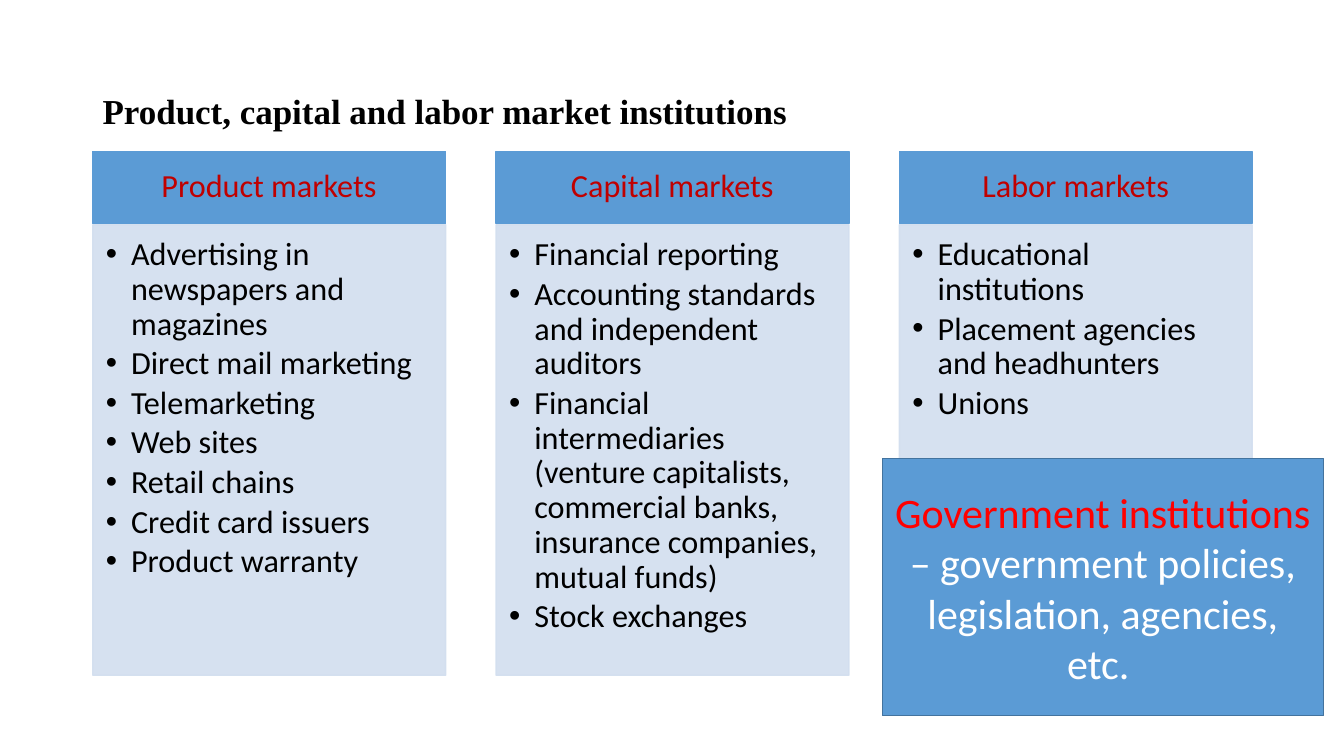
"""Build a slide of three market columns with a government callout."""
from lxml.etree import SubElement
from pptx import Presentation
from pptx.dml.color import RGBColor
from pptx.enum.shapes import MSO_SHAPE as SHAPE
from pptx.enum.text import MSO_ANCHOR as ANCHOR, PP_ALIGN as ALIGN
from pptx.oxml.ns import qn
from pptx.util import Inches, Pt

LEFT, PITCH, COL_W = 0.92, 4, 3.5
HEAD_TOP, HEAD_H = 1.5, 0.72
BODY_TOP, BODY_H = 2.23, 4.47
BLUE, PALE, DARK_BLUE = "5B9BD5", "D2DEEF", "43739E"
BLACK, WHITE, RED, DARK_RED = "000000", "FFFFFF", "FF0000", "C00000"

MARKETS = {
    "Product markets": [
        "Advertising in newspapers and magazines", "Direct mail marketing",
        "Telemarketing", "Web sites", "Retail chains",
        "Credit card issuers", "Product warranty"],
    "Capital markets": [
        "Financial reporting",
        "Accounting standards and independent auditors",
        "Financial intermediaries (venture capitalists, commercial banks, "
        "insurance companies, mutual funds)",
        "Stock exchanges"],
    "Labor markets": [
        "Educational institutions", "Placement agencies and headhunters",
        "Unions"],
}


def paint(color_format, color):
    """Set a colour from a hex string."""
    color_format.rgb = RGBColor.from_string(color)


def set_alpha(fill, percent):
    """Make a solid fill partly transparent."""
    color = fill.fore_color._xFill.find(qn("a:srgbClr"))
    SubElement(color, qn("a:alpha"), val=str(percent * 1000))


def set_frame(tf, anchor, insets=(0.1, 0.05, 0.1, 0.05)):
    """Wrap a text frame and set its anchor and insets."""
    tf.word_wrap = True
    tf.vertical_anchor = anchor
    (tf.margin_left, tf.margin_top,
     tf.margin_right, tf.margin_bottom) = map(Inches, insets)


def add_box(s, place, fill, line, alpha=100):
    """Add a filled and outlined rectangle."""
    sp = s.shapes.add_shape(SHAPE.RECTANGLE, *map(Inches, place))
    sp.shadow.inherit = False
    sp.fill.solid()
    paint(sp.fill.fore_color, fill)
    sp.line.width = Pt(1)
    sp.line.fill.solid()
    paint(sp.line.fill.fore_color, line)
    if alpha < 100:
        set_alpha(sp.fill, alpha)
        set_alpha(sp.line.fill, alpha)
    return sp


def add_run(p, text, size, color, font="Calibri", bold=False):
    """Append a formatted run."""
    r = p.add_run()
    r.text = text
    r.font.size = Pt(size)
    r.font.name = font
    r.font.bold = bold
    paint(r.font.color, color)


def format_paragraph(p, align, after=0, spacing=0.9):
    """Set alignment and spacing."""
    p.alignment = align
    p.line_spacing = spacing
    p.space_before = Pt(0)
    p.space_after = Pt(after)


def add_bullet(p):
    """Give a paragraph a hanging bullet."""
    pPr = p._p.get_or_add_pPr()
    pPr.set("marL", str(Inches(0.25)))
    pPr.set("indent", str(Inches(-0.25)))
    SubElement(pPr, qn("a:buFont"), typeface="Arial")
    SubElement(pPr, qn("a:buChar"), char="•")


def add_title(s, text):
    """Add the slide title."""
    tf = s.shapes.add_textbox(*map(Inches, (LEFT, 0.4, 11.5, 1.45))).text_frame
    set_frame(tf, ANCHOR.MIDDLE)
    p = tf.paragraphs[0]
    format_paragraph(p, ALIGN.JUSTIFY)
    add_run(p, text, 25, BLACK, "Times New Roman", True)


def add_market(s, column, name, items):
    """Add one column with its heading and bullet list."""
    x = LEFT + column * PITCH
    head = add_box(s, (x, HEAD_TOP, COL_W, HEAD_H), BLUE, BLUE).text_frame
    set_frame(head, ANCHOR.MIDDLE, (0.18, 0.1, 0.18, 0.1))
    format_paragraph(head.paragraphs[0], ALIGN.CENTER)
    add_run(head.paragraphs[0], name, 23, DARK_RED)

    body = add_box(s, (x, BODY_TOP, COL_W, BODY_H), PALE, PALE, 90).text_frame
    set_frame(body, ANCHOR.TOP, (0.13, 0.13, 0.18, 0.2))
    for i, item in enumerate(items):
        p = body.add_paragraph() if i else body.paragraphs[0]
        p.level = 1
        format_paragraph(p, ALIGN.LEFT, after=3.45)
        add_bullet(p)
        add_run(p, item, 23, BLACK)


def add_government(s):
    """Add the government callout."""
    tf = add_box(s, (8.75, 4.55, 4.38, 2.55), BLUE, DARK_BLUE).text_frame
    set_frame(tf, ANCHOR.MIDDLE)
    p = tf.paragraphs[0]
    format_paragraph(p, ALIGN.CENTER, spacing=1.0)
    add_run(p, "Government institutions ", 30, RED)
    add_run(p, "– government policies, legislation, agencies, etc. ", 30, WHITE)


def main():
    """Build and save the slide."""
    prs = Presentation()
    prs.slide_width, prs.slide_height = Inches(13.33), Inches(7.5)
    s = prs.slides.add_slide(prs.slide_layouts[6])
    add_title(s, "Product, capital and labor market institutions")
    for column, (name, items) in enumerate(MARKETS.items()):
        add_market(s, column, name, items)
    add_government(s)
    prs.save("out.pptx")


if __name__ == "__main__":
    main()
